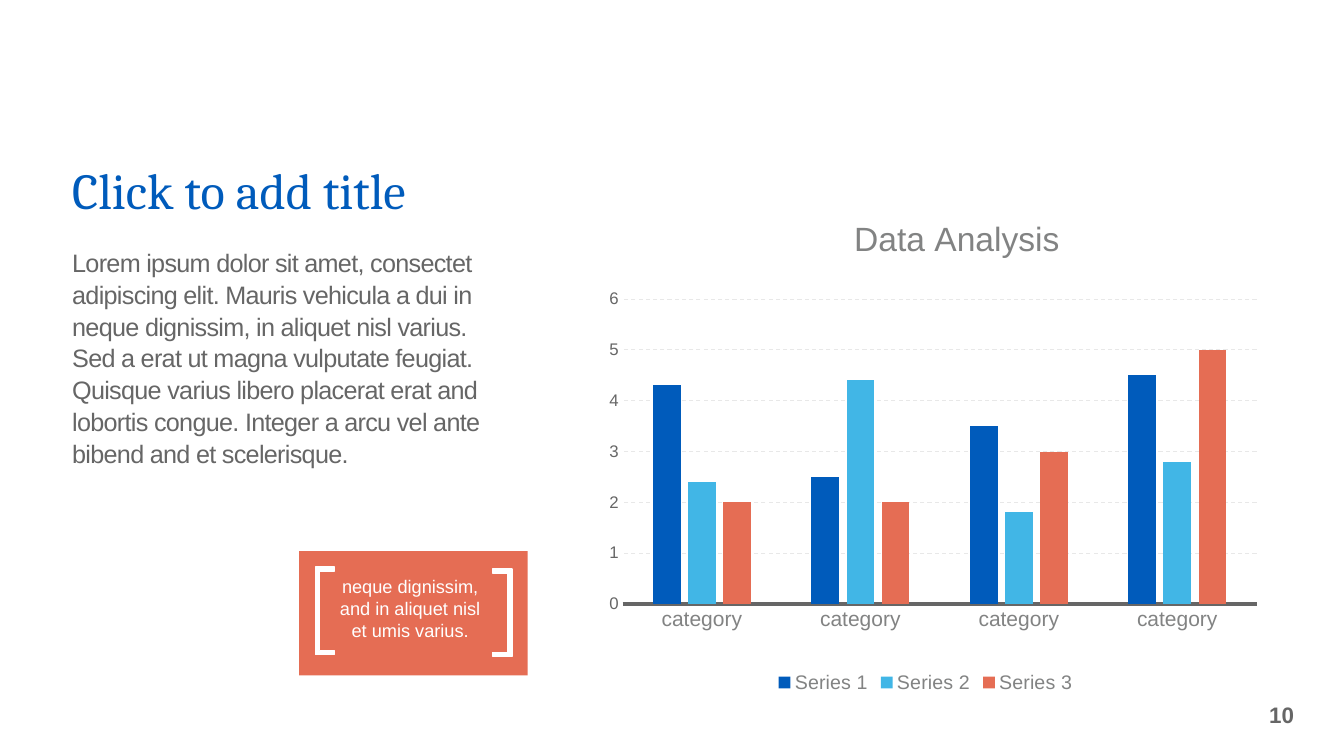
import pptx
import pptx.util
import pptx.chart.data
import pptx.dml.color
import pptx.enum.chart
import pptx.enum.dml
import pptx.enum.shapes
import pptx.enum.text
import pptx.oxml
import pptx.oxml.ns
from dataclasses import dataclass

Cm = pptx.util.Cm
Pt = pptx.util.Pt
ALIGN = pptx.enum.text.PP_ALIGN
ANCHOR = pptx.enum.text.MSO_ANCHOR

TITLE = "Click to add title"
BODY = (
    "Lorem ipsum dolor sit amet, consectet adipiscing elit. Mauris vehicula a dui in "
    "neque dignissim, in aliquet nisl varius. Sed a erat ut magna vulputate feugiat. "
    "Quisque varius libero placerat erat and lobortis congue. Integer a arcu vel ante "
    "bibend and et scelerisque."
)
QUOTE = ["neque dignissim, and in aliquet nisl", "et umis varius."]
PAGE = "10"
CHART_TITLE = "Data Analysis"
CATEGORIES = ["category"] * 4
SERIES = {
    "Series 1": (4.3, 2.5, 3.5, 4.5),
    "Series 2": (2.4, 4.4, 1.8, 2.8),
    "Series 3": (2, 2, 3, 5),
}


@dataclass(frozen=True)
class Theme:
    heading: str = "Cambria"
    sans: str = "Arial"
    blue: str = "005BBB"
    sky: str = "41B6E6"
    coral: str = "E56D54"
    white: str = "FFFFFF"
    text: str = "666666"
    muted: str = "828383"
    grid: str = "E8E8E8"
    title_pt: int = 36
    chart_title_pt: int = 24
    body_pt: int = 18
    page_pt: int = 16
    category_pt: int = 15
    legend_pt: int = 14
    quote_pt: int = 13
    value_pt: int = 12


T = Theme()


def rgb(code):
    return pptx.dml.color.RGBColor.from_string(code)


def style(font, size, color, name=T.sans, bold=False):
    font.name = name
    font.size = Pt(size)
    font.bold = bold
    font.color.rgb = rgb(color)


def paint(sp, color, line_pt=0):
    sp.shadow.inherit = False
    sp.fill.solid()
    sp.fill.fore_color.rgb = rgb(color)
    if line_pt:
        sp.line.color.rgb = rgb(color)
        sp.line.width = Pt(line_pt)
    else:
        sp.line.fill.background()


def add_text(slide, box, lines, size, color, name=T.sans, bold=False,
             align=ALIGN.LEFT, anchor=ANCHOR.TOP, spacing=1.0, tracking=0):
    tf = slide.shapes.add_textbox(*map(Cm, box)).text_frame
    tf.word_wrap = True
    tf.vertical_anchor = anchor
    p = tf.paragraphs[0]
    p.alignment = align
    p.line_spacing = spacing
    for i, line in enumerate(lines):
        if i:
            p.add_line_break()
        r = p.add_run()
        r.text = line
        style(r.font, size, color, name, bold)
        if tracking:
            r.font._element.set("spc", str(tracking))
    return tf


def add_bracket(slide, x, y, direction):
    width, height, bar = 0.48 * direction, 2.21, 0.1
    inner = x + bar * direction
    points = [
        (x + width, y), (x, y), (x, y + height), (x + width, y + height),
        (x + width, y + height - bar), (inner, y + height - bar),
        (inner, y + bar), (x + width, y + bar),
    ]
    corners = [(Cm(px), Cm(py)) for px, py in points]
    builder = slide.shapes.build_freeform(*corners[0])
    builder.add_line_segments(corners[1:], close=True)
    paint(builder.convert_to_shape(), T.white, 1)


def set_layout(element, before, **fractions):
    modes = '<c:layoutTarget val="inner"/>' if "w" in fractions else ""
    modes += '<c:xMode val="edge"/><c:yMode val="edge"/>'
    values = "".join(f'<c:{key} val="{val}"/>' for key, val in fractions.items())
    for old in element.findall(pptx.oxml.ns.qn("c:layout")):
        element.remove(old)
    layout = pptx.oxml.parse_xml(
        f'<c:layout {pptx.oxml.ns.nsdecls("c")}><c:manualLayout>'
        f"{modes}{values}</c:manualLayout></c:layout>"
    )
    element.find(pptx.oxml.ns.qn(before)).addprevious(layout)


def add_column_chart(slide):
    data = pptx.chart.data.CategoryChartData()
    data.categories = CATEGORIES
    for name, values in SERIES.items():
        data.add_series(name, values)
    box = map(Cm, (14.45, 5.18, 17.75, 12.4))
    chart = slide.shapes.add_chart(
        pptx.enum.chart.XL_CHART_TYPE.COLUMN_CLUSTERED, *box, data).chart
    style(chart.font, T.value_pt, T.text)

    chart.has_title = True
    r = chart.chart_title.text_frame.paragraphs[0].add_run()
    r.text = CHART_TITLE
    style(r.font, T.chart_title_pt, T.muted)
    chart.chart_title.include_in_layout = False

    chart.has_legend = True
    chart.legend.position = pptx.enum.chart.XL_LEGEND_POSITION.BOTTOM
    chart.legend.include_in_layout = False
    style(chart.legend.font, T.legend_pt, T.muted)

    plot = chart.plots[0]
    plot.gap_width = 219
    plot.overlap = -27
    plot.vary_by_categories = False
    for series, color in zip(plot.series, (T.blue, T.sky, T.coral)):
        series.format.fill.solid()
        series.format.fill.fore_color.rgb = rgb(color)

    cat, val = chart.category_axis, chart.value_axis
    for axis, size, color in ((cat, T.category_pt, T.muted), (val, T.value_pt, T.text)):
        axis.major_tick_mark = pptx.enum.chart.XL_TICK_MARK.NONE
        axis.minor_tick_mark = pptx.enum.chart.XL_TICK_MARK.NONE
        style(axis.tick_labels.font, size, color)
    cat.format.line.color.rgb = rgb(T.text)
    cat.format.line.width = Pt(3.25)
    val.minimum_scale, val.maximum_scale, val.major_unit = 0, 6, 1
    val.format.line.fill.background()
    grid = val.major_gridlines.format.line
    grid.color.rgb = rgb(T.grid)
    grid.width = Pt(0.75)
    grid.dash_style = pptx.enum.dml.MSO_LINE.DASH

    set_layout(chart.chart_title._element, "c:overlay", x=0.39, y=0.01)
    set_layout(plot._element.getparent(), "c:barChart", x=0.07, y=0.19, w=0.9, h=0.62)


def main():
    prs = pptx.Presentation()
    prs.slide_width, prs.slide_height = Cm(33.87), Cm(19.05)
    slide = prs.slides.add_slide(prs.slide_layouts[6])

    add_text(slide, (30.68, 17.27, 2.18, 1.47), [PAGE], T.page_pt, T.text,
             bold=True, align=ALIGN.RIGHT, anchor=ANCHOR.MIDDLE)
    add_column_chart(slide)
    add_text(slide, (1.57, 3.66, 11.86, 1.98), [TITLE], T.title_pt, T.blue,
             name=T.heading, anchor=ANCHOR.BOTTOM, spacing=0.8)
    add_text(slide, (1.57, 6.07, 11.13, 7.7), [BODY], T.body_pt, T.text,
             spacing=1.05, tracking=-50)

    sp = slide.shapes.add_shape(pptx.enum.shapes.MSO_SHAPE.RECTANGLE,
                                *map(Cm, (7.54, 13.89, 5.76, 3.13)))
    paint(sp, T.coral)
    add_bracket(slide, 7.95, 14.3 - 0.01, 1)
    add_bracket(slide, 12.9, 14.34, -1)
    add_text(slide, (8.15, 14.38, 4.37, 1.93), QUOTE, T.quote_pt, T.white,
             align=ALIGN.CENTER)
    prs.save("out.pptx")


if __name__ == "__main__":
    main()
